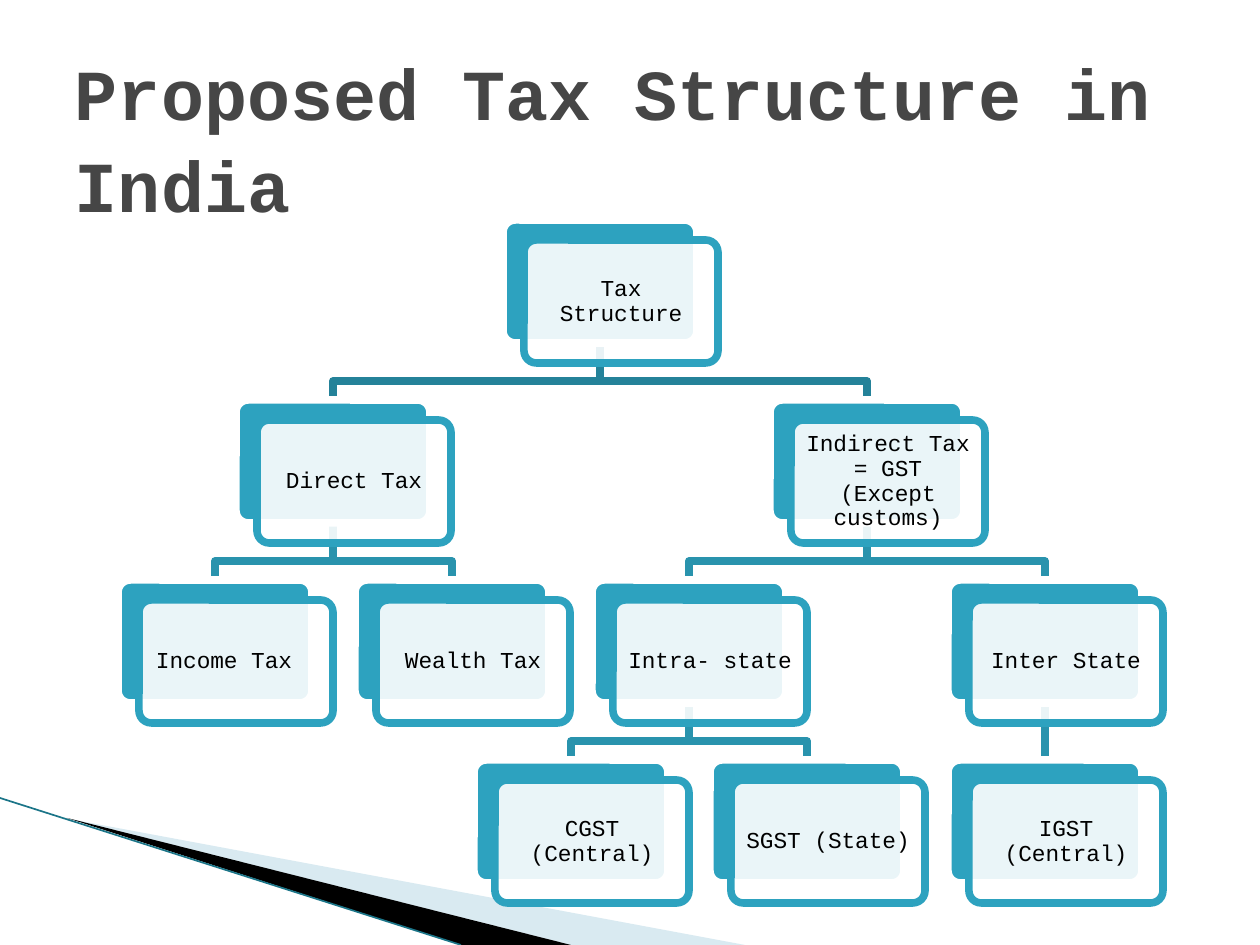
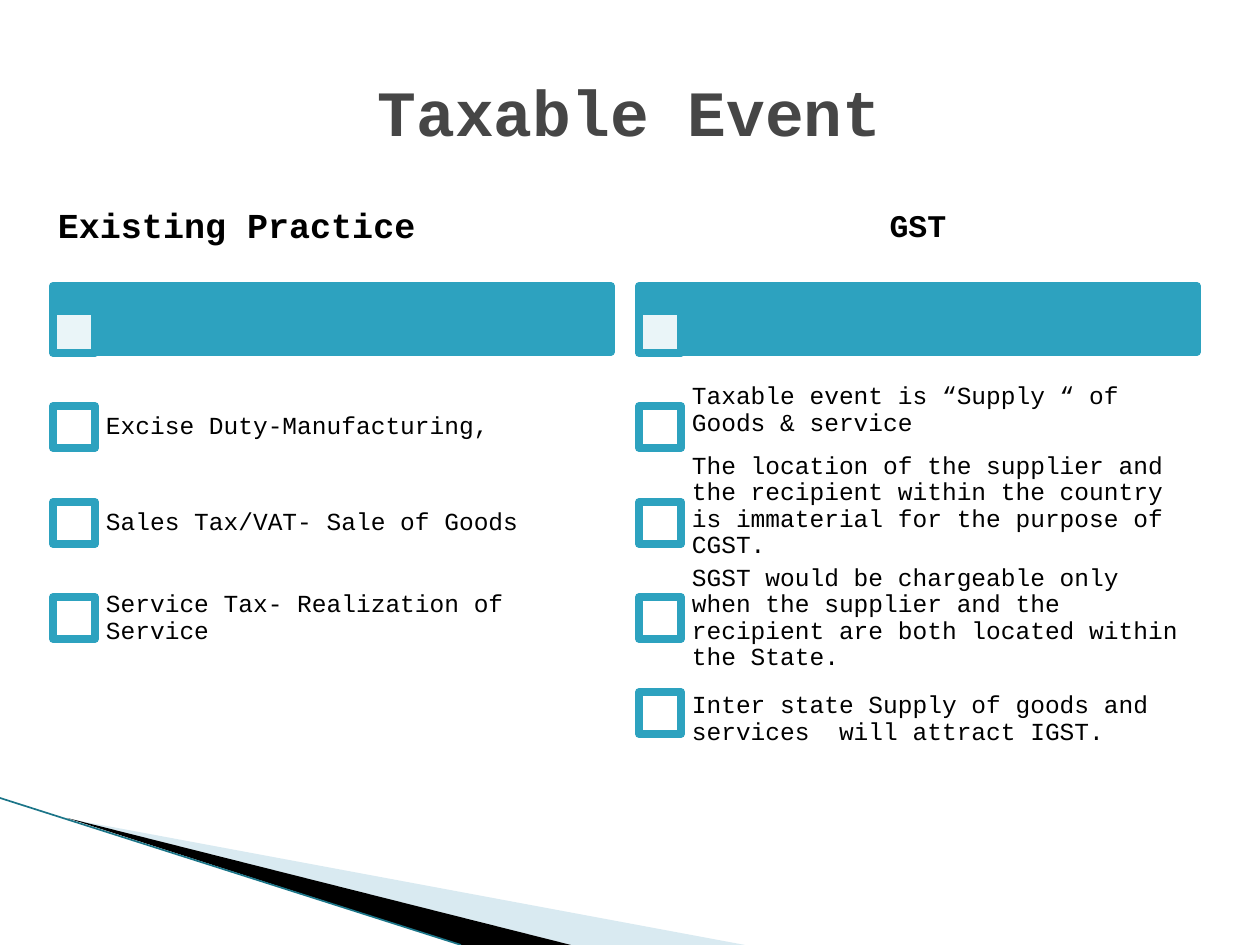
from lxml.etree import SubElement
from pptx import Presentation
from pptx.dml.color import RGBColor
from pptx.enum.shapes import MSO_CONNECTOR, MSO_SHAPE
from pptx.enum.text import MSO_ANCHOR as ANCHOR, PP_ALIGN as ALIGN
from pptx.oxml.ns import qn
from pptx.util import Pt

PX = 7257  # EMU per px, 126 px to the inch
WIDTH, HEIGHT = 1260, 945
FONT = "Courier New"
LINE_WIDTH = Pt(4.33)
COLORS = {
    name: RGBColor.from_string(value)
    for name, value in {
        "teal": "2DA2BF",
        "root_link": "248299",
        "link": "2993AD",
        "pale": "D9EAF1",
        "edge": "1B7588",
        "title": "464646",
        "black": "000000",
        "white": "FFFFFF",
    }.items()
}


def add_box(slide, kind, left, top, width, height, fill=None, line=None, opacity=100):
    """Add a preset shape, or a text box when kind is None; lengths in px."""
    place = [value * PX for value in (left, top, width, height)]
    if kind is None:
        return slide.shapes.add_textbox(*place)
    shape = slide.shapes.add_shape(kind, *place)
    shape.shadow.inherit = False
    shape.fill.solid()
    shape.fill.fore_color.rgb = COLORS[fill]
    if opacity < 100:
        color = shape._element.spPr.find(qn("a:solidFill")).find(qn("a:srgbClr"))
        SubElement(color, qn("a:alpha")).set("val", str(opacity * 1000))
    shape.line.color.rgb = COLORS[line]
    shape.line.width = LINE_WIDTH
    return shape


def write(shape, text, size, color="black", bold=False, align=ALIGN.LEFT,
          anchor=ANCHOR.MIDDLE, spacing=0.9, insets=(6, 6, 6, 6)):
    """Fill a shape with one paragraph; insets are left, top, right, bottom in px."""
    frame = shape.text_frame
    frame.word_wrap = True
    frame.vertical_anchor = anchor
    (frame.margin_left, frame.margin_top,
     frame.margin_right, frame.margin_bottom) = [value * PX for value in insets]
    paragraph = frame.paragraphs[0]
    paragraph.text = text
    paragraph.alignment = align
    paragraph.line_spacing = spacing
    font = paragraph.font
    font.name, font.size, font.bold = FONT, Pt(size), bold
    font.color.rgb = COLORS[color]


presentation = Presentation()
presentation.slide_width = WIDTH * PX
presentation.slide_height = HEIGHT * PX

# Shared corner band and titles
WEDGES = [
    ("pale", [(69, 819), (745, HEIGHT), (571, HEIGHT)]),
    ("black", [(67, 818), (571, HEIGHT), (461, HEIGHT)]),
]
TITLES = [
    ("Proposed Tax Structure in India", 38, 41, ALIGN.LEFT),
    ("Taxable Event", 61, 36.9, ALIGN.CENTER),
]
for title, top, size, align in TITLES:
    slide = presentation.slides.add_slide(presentation.slide_layouts[6])
    for color, points in WEDGES:
        builder = slide.shapes.build_freeform(*points[0], scale=PX)
        builder.add_line_segments(points[1:], close=True)
        wedge = builder.convert_to_shape()
        wedge.shadow.inherit = False
        wedge.fill.solid()
        wedge.fill.fore_color.rgb = COLORS[color]
        wedge.line.fill.background()
    edge = slide.shapes.add_connector(
        MSO_CONNECTOR.STRAIGHT, 0, 798 * PX, 461 * PX, HEIGHT * PX)
    edge.line.color.rgb = COLORS["edge"]
    edge.line.width = Pt(0.95)
    SubElement(edge._element.spPr, qn("a:effectLst"))
    title_box = add_box(slide, None, 63, top, 1134, 158)
    write(title_box, title, size, "title", True, align, ANCHOR.TOP, 1.06, (12, 6, 12, 6))

tree_slide, event_slide = presentation.slides

# Tax tree: name, column, row, parent
NODES = [
    ("Tax Structure", 3.25, 0, None),
    ("Direct Tax", 1, 1, "Tax Structure"),
    ("Indirect Tax = GST (Except customs)", 5.5, 1, "Tax Structure"),
    ("Income Tax", 0, 2, "Direct Tax"),
    ("Wealth Tax", 2, 2, "Direct Tax"),
    ("Intra- state", 4, 2, "Indirect Tax = GST (Except customs)"),
    ("Inter State", 7, 2, "Indirect Tax = GST (Except customs)"),
    ("CGST (Central)", 3, 3, "Intra- state"),
    ("SGST (State)", 5, 3, "Intra- state"),
    ("IGST (Central)", 7, 3, "Inter State"),
]
NODE_WIDTH, NODE_HEIGHT = 194, 123
COLUMN_PITCH, ROW_PITCH = 118.5, 180
corners = {
    name: (118 + round(column * COLUMN_PITCH), 220 + row * ROW_PITCH)
    for name, column, row, _ in NODES
}

for name, _, row, parent in NODES:
    if parent is None:
        continue
    start_x, end_x = [corners[key][0] + NODE_WIDTH // 2 for key in (parent, name)]
    start_y, end_y = corners[parent][1] + NODE_HEIGHT, corners[name][1]
    bend_y = start_y + 38
    builder = tree_slide.shapes.build_freeform(start_x, start_y, scale=PX)
    builder.add_line_segments(
        [(start_x, bend_y), (end_x, bend_y), (end_x, end_y)], close=False)
    link = builder.convert_to_shape()
    link.shadow.inherit = False
    link.fill.background()
    link.line.color.rgb = COLORS["root_link" if row == 1 else "link"]
    link.line.width = LINE_WIDTH

for name, (left, top) in corners.items():
    back = add_box(tree_slide, MSO_SHAPE.ROUNDED_RECTANGLE, left, top,
                   NODE_WIDTH, NODE_HEIGHT, "teal", "white")
    front = add_box(tree_slide, MSO_SHAPE.ROUNDED_RECTANGLE, left + 21, top + 20,
                    NODE_WIDTH, NODE_HEIGHT, "white", "teal", 90)
    back.adjustments[0] = front.adjustments[0] = 0.1
    right_inset = 30 if name == "Income Tax" else 6
    write(front, name, 13, align=ALIGN.CENTER, insets=(6, 6, right_inset, 6))

# Two checklists: heading, size, alignment, items with their vertical shift
CHECKLISTS = [
    ("Existing Practice", 20, ALIGN.LEFT, [
        ("Excise Duty-Manufacturing,", 0),
        ("Sales Tax/VAT- Sale of Goods", 0),
        ("Service Tax- Realization of Service", 0),
    ]),
    ("GST", 18, ALIGN.CENTER, [
        ("Taxable event is “Supply “ of Goods & service", -17),
        ("The location of the supplier and the recipient within the country "
         "is immaterial for the purpose of CGST.", -17),
        ("SGST would be chargeable only when the supplier and the recipient "
         "are both located within the State.", 0),
        ("Inter state Supply of goods and services  will attract IGST.", 6),
    ]),
]
LIST_WIDTH, LIST_PITCH = 558, 586
MARKER, ITEM_PITCH, ITEM_HEIGHT = 42, 95.5, 120

for index, (heading, size, align, items) in enumerate(CHECKLISTS):
    left = 53 + index * LIST_PITCH
    add_box(event_slide, MSO_SHAPE.RECTANGLE, left, 286, LIST_WIDTH, 66, "teal", "teal")
    add_box(event_slide, MSO_SHAPE.RECTANGLE, left, 311, MARKER, MARKER,
            "white", "teal", 90)
    heading_box = add_box(event_slide, None, left, 168, LIST_WIDTH, 118)
    write(heading_box, heading, size, bold=True, align=align, insets=(5, 4, 5, 4))
    for row, (item, shift) in enumerate(items):
        top = 406 + round(row * ITEM_PITCH)
        add_box(event_slide, MSO_SHAPE.RECTANGLE, left, top, MARKER, MARKER,
                "white", "teal")
        item_top = top + (MARKER - ITEM_HEIGHT) // 2 + shift
        item_box = add_box(event_slide, None, left + 39, item_top,
                           LIST_WIDTH - 39, ITEM_HEIGHT)
        write(item_box, item, 14, insets=(14, 0, 14, 0))

presentation.save("out.pptx")
